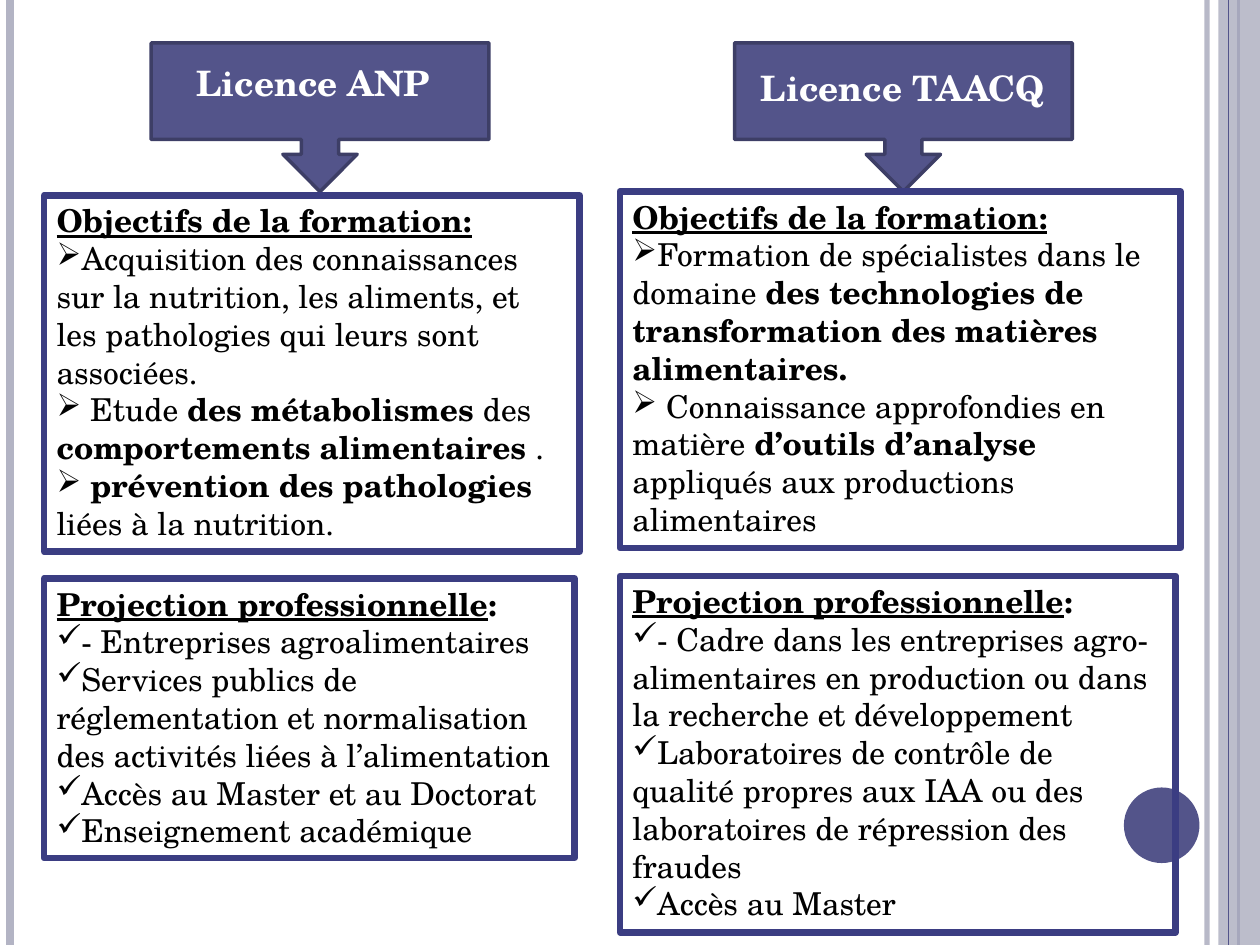
"""Build a slide comparing the goals and careers of two bachelor programmes."""
from lxml.etree import SubElement
from pptx import Presentation
from pptx.dml.color import RGBColor
from pptx.enum.shapes import MSO_CONNECTOR, MSO_SHAPE
from pptx.enum.text import MSO_ANCHOR, PP_ALIGN
from pptx.oxml.ns import qn
from pptx.util import Inches, Pt

COLOURS = {
    "rule": "B3B4C4",
    "accent": "53548A",
    "accent_edge": "3D3E66",
    "frame": "3B3D82",
    "text": "000000",
    "label": "FFFFFF",
}
FONT = "TeX Gyre Schola"
GOALS = ("Objectifs de la formation:", "", "➢")
CAREERS = ("Projection professionnelle", ":", "✓")

PROGRAMMES = [
    {
        "callout": 5.83,
        "label": ("Licence TAACQ", 5.94, 0.48, 2.56),
        "panels": [
            (GOALS, (4.92, 1.52, 4.45, 2.83), [
                "Formation de spécialistes dans le domaine *des technologies de "
                "transformation des matières alimentaires.*",
                " Connaissance approfondies en matière *d’outils d’analyse *"
                "appliqués aux productions alimentaires",
            ]),
            (CAREERS, (4.92, 4.57, 4.41, 2.83), [
                "- Cadre dans les entreprises agro-alimentaires en production ou "
                "dans la recherche et développement",
                "Laboratoires de contrôle de qualité propres aux IAA ou des "
                "laboratoires de répression des fraudes",
                "Accès au Master",
            ]),
        ],
    },
    {
        "callout": 1.2,
        "label": ("Licence ANP", 1.46, 0.44, 2.18),
        "panels": [
            (GOALS, (0.35, 1.55, 4.25, 2.83), [
                "Acquisition des connaissances sur la nutrition, les aliments, et "
                "les pathologies qui leurs sont associées.",
                " Etude *des métabolismes *des *comportements alimentaires *.",
                " *prévention des pathologies *liées à la nutrition.",
            ]),
            (CAREERS, (0.35, 4.59, 4.21, 2.22), [
                "- Entreprises agroalimentaires",
                "Services publics de réglementation et normalisation des activités "
                "liées à l’alimentation",
                "Accès au Master et au Doctorat",
                "Enseignement académique",
            ]),
        ],
    },
]

deck = Presentation()
deck.slide_width, deck.slide_height = Inches(10), Inches(7.5)
page = deck.slides.add_slide(deck.slide_layouts[6])


def add_box(kind, place, fill=None, edge=None, width=0):
    box = page.shapes.add_shape(kind, *[Inches(length) for length in place])
    box.shadow.inherit = False
    if fill:
        box.fill.solid()
        box.fill.fore_color.rgb = RGBColor.from_string(COLOURS[fill])
    else:
        box.fill.background()
    if edge:
        box.line.color.rgb = RGBColor.from_string(COLOURS[edge])
        box.line.width = Pt(width)
    else:
        box.line.fill.background()
    return box


def add_span(para, text, colour="text", **formats):
    span = para.add_run()
    span.text = text
    span.font.color.rgb = RGBColor.from_string(COLOURS[colour])
    for name, value in ({"name": FONT, "size": Pt(18)} | formats).items():
        setattr(span.font, name, value)


band = add_box(MSO_SHAPE.RECTANGLE, (9.67, 0, 0.33, 7.5), "rule")
tints = [(band.fill._xPr.find(qn("a:solidFill"))[0], 87)]
for left, colour, width, opacity in [
    (9.58, "rule", 3, 93),
    (0.08, "rule", 4.5, 100),
    (9.83, "accent", 1.5, 100),
    (9.75, "accent", 0.75, 100),
]:
    rule = page.shapes.add_connector(
        MSO_CONNECTOR.STRAIGHT, Inches(left), 0, Inches(left), Inches(7.5)
    )
    rule.line.color.rgb = RGBColor.from_string(COLOURS[colour])
    rule.line.width = Pt(width)
    properties = rule._element.spPr
    SubElement(properties, qn("a:effectLst"))
    if opacity < 100:
        tints.append((properties.find(qn("a:ln")).find(qn("a:solidFill"))[0], opacity))
    if left == 9.83:
        band._element.addprevious(rule._element)
for tint, opacity in tints:
    SubElement(tint, qn("a:alpha"), val=str(opacity * 1000))

add_box(MSO_SHAPE.OVAL, (8.92, 6.25, 0.6, 0.6), "accent")

for programme in PROGRAMMES:
    add_box(
        MSO_SHAPE.DOWN_ARROW_CALLOUT, (programme["callout"], 0.34, 2.68, 1.18),
        "accent", "accent_edge", 2,
    )
    title, left, top, width = programme["label"]
    label = page.shapes.add_textbox(Inches(left), Inches(top), Inches(width), Inches(0.44))
    label.text_frame.word_wrap = True
    add_span(label.text_frame.paragraphs[0], title, "label", size=Pt(20), bold=True)

    for (heading, ending, bullet), place, items in programme["panels"]:
        frame = add_box(MSO_SHAPE.RECTANGLE, place, None, "frame", 3.75).text_frame
        frame.word_wrap = True
        frame.vertical_anchor = MSO_ANCHOR.TOP
        para = frame.paragraphs[0]
        para.alignment = PP_ALIGN.LEFT
        add_span(para, heading, bold=True, underline=True)
        if ending:
            add_span(para, ending, bold=True)
        for item in items:
            para = frame.add_paragraph()
            para.alignment = PP_ALIGN.LEFT
            SubElement(para._p.get_or_add_pPr(), qn("a:buChar"), char=bullet)
            for index, text in enumerate(item.split("*")):
                if text:
                    add_span(para, text, bold=index % 2 == 1)

deck.save("out.pptx")
